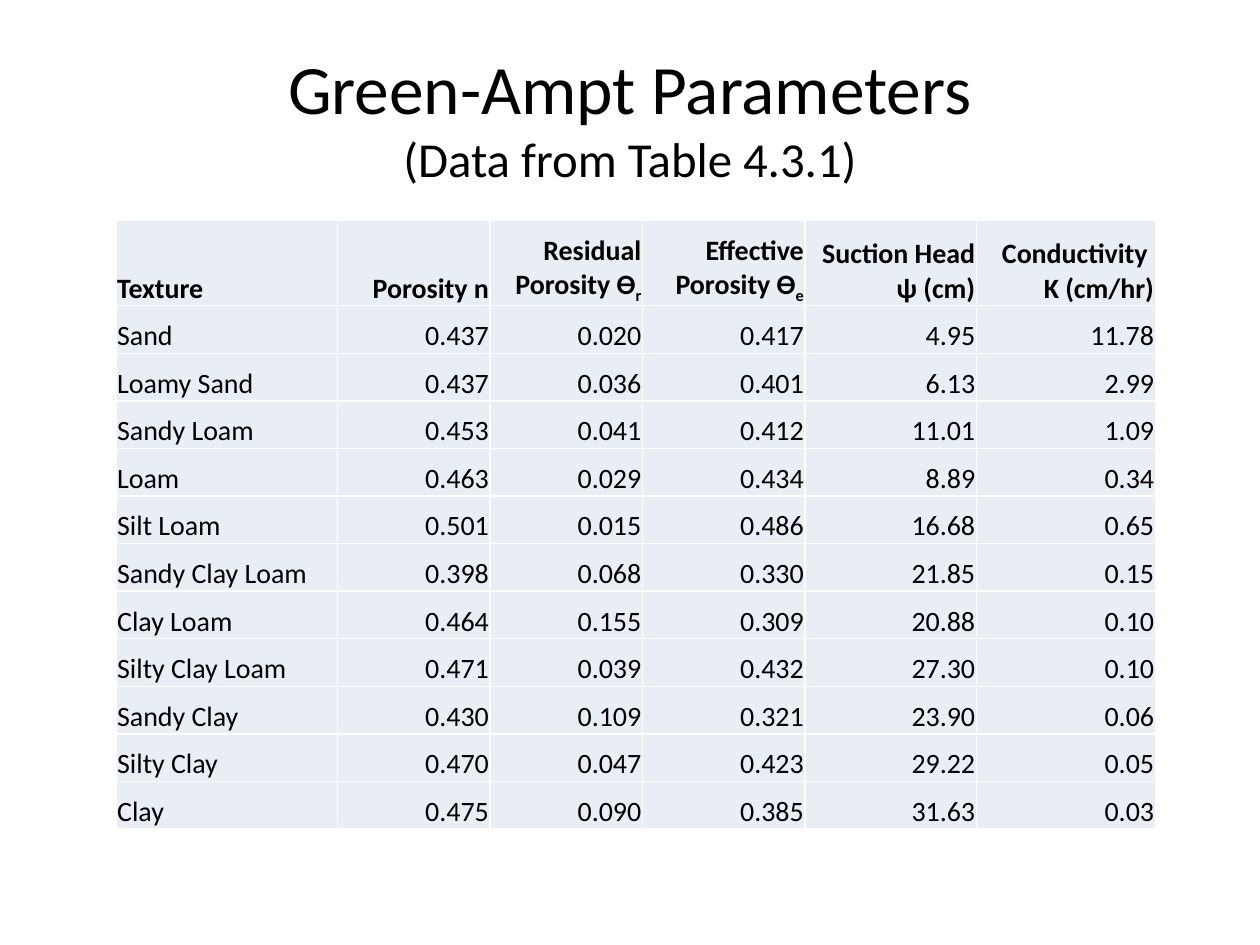
import dataclasses
import lxml.etree
import pptx
import pptx.dml.color
import pptx.enum.text
import pptx.oxml.ns
import pptx.util


@dataclasses.dataclass
class Theme:
    font: str = "Calibri"
    ink: str = "000000"
    fill: str = "E9EDF4"
    rule: str = "FFFFFF"
    head: float = 39.6
    sub: float = 27.9
    body: float = 16
    line: float = 1


class Deck:
    def __init__(self, theme, wide, high):
        self.theme = theme
        self.show = pptx.Presentation()
        self.show.slide_width = pptx.util.Inches(wide)
        self.show.slide_height = pptx.util.Inches(high)
        self.slide = self.show.slides.add_slide(self.show.slide_layouts[5])

    def box(self, left, top, wide, high):
        full = (self.show.slide_width, self.show.slide_height) * 2
        return [round(part * size) for part, size in zip((left, top, wide, high), full)]

    def style(self, run, size, bold=False):
        run.font.name = self.theme.font
        run.font.size = pptx.util.Pt(size)
        run.font.bold = bold
        run.font.color.rgb = pptx.dml.color.RGBColor.from_string(self.theme.ink)

    def title(self, text, area):
        shape = self.slide.shapes.title
        shape.left, shape.top, shape.width, shape.height = self.box(*area)
        frame = shape.text_frame
        frame.text = text
        frame.auto_size = pptx.enum.text.MSO_AUTO_SIZE.NONE
        frame.vertical_anchor = pptx.enum.text.MSO_ANCHOR.MIDDLE
        para = frame.paragraphs[0]
        para.alignment = pptx.enum.text.PP_ALIGN.CENTER
        for run, size in zip(para.runs, (self.theme.head, self.theme.sub)):
            self.style(run, size)

    def border(self, cell):
        props = cell._tc.get_or_add_tcPr()
        for side in ("lnL", "lnR", "lnT", "lnB"):
            line = lxml.etree.SubElement(props, pptx.oxml.ns.qn(f"a:{side}"))
            line.set("w", str(pptx.util.Pt(self.theme.line)))
            solid = lxml.etree.SubElement(line, pptx.oxml.ns.qn("a:solidFill"))
            tone = lxml.etree.SubElement(solid, pptx.oxml.ns.qn("a:srgbClr"))
            tone.set("val", self.theme.rule)

    def cell(self, cell, text, align, bold, below=""):
        self.border(cell)
        cell.fill.solid()
        cell.fill.fore_color.rgb = pptx.dml.color.RGBColor.from_string(self.theme.fill)
        cell.vertical_anchor = pptx.enum.text.MSO_ANCHOR.BOTTOM
        cell.margin_left = cell.margin_right = cell.margin_top = pptx.util.Inches(0.01)
        cell.margin_bottom = 0
        cell.text_frame.text = text
        if below:
            mark = cell.text_frame.paragraphs[-1].add_run()
            mark.text = below
            mark.font._element.set("baseline", "-25000")
        for para in cell.text_frame.paragraphs:
            para.alignment = align
            for run in para.runs:
                self.style(run, self.theme.body, bold)

    def table(self, rows, area, cols, top, marks):
        left, above, wide, high = self.box(*area)
        frame = self.slide.shapes.add_table(len(rows), len(cols), left, above, wide, high)
        grid = frame.table
        grid.first_row = grid.horz_banding = False
        for col, share in zip(grid.columns, cols):
            col.width = round(wide * share / sum(cols))
        first = round(high * top)
        for r, row in enumerate(rows):
            grid.rows[r].height = first if r == 0 else (high - first) // (len(rows) - 1)
            for c, text in enumerate(row):
                align = pptx.enum.text.PP_ALIGN.RIGHT if c else pptx.enum.text.PP_ALIGN.LEFT
                below = marks.get(c, "") if r == 0 else ""
                self.cell(grid.cell(r, c), text, align, r == 0, below)


HEADS = ("Texture", "Porosity n", "Residual Porosity ϴ", "Effective Porosity ϴ",
         "Suction Head ψ (cm)", "Conductivity \nK (cm/hr)")
SOILS = (
    ("Sand", "0.437", "0.020", "0.417", "4.95", "11.78"),
    ("Loamy Sand", "0.437", "0.036", "0.401", "6.13", "2.99"),
    ("Sandy Loam", "0.453", "0.041", "0.412", "11.01", "1.09"),
    ("Loam", "0.463", "0.029", "0.434", "8.89", "0.34"),
    ("Silt Loam", "0.501", "0.015", "0.486", "16.68", "0.65"),
    ("Sandy Clay Loam", "0.398", "0.068", "0.330", "21.85", "0.15"),
    ("Clay Loam", "0.464", "0.155", "0.309", "20.88", "0.10"),
    ("Silty Clay Loam", "0.471", "0.039", "0.432", "27.30", "0.10"),
    ("Sandy Clay", "0.430", "0.109", "0.321", "23.90", "0.06"),
    ("Silty Clay", "0.470", "0.047", "0.423", "29.22", "0.05"),
    ("Clay", "0.475", "0.090", "0.385", "31.63", "0.03"),
)


def main():
    deck = Deck(Theme(), 10, 7.5)
    deck.title("Green-Ampt Parameters\v(Data from Table 4.3.1)",
               (0.05, 0.3 / 7.5, 0.9, 1.25 / 7.5))
    deck.table((HEADS, *SOILS), (0.92 / 10, 1.75 / 7.5, 8.25 / 10, 4.83 / 7.5),
               (1.76, 1.21, 1.21, 1.29, 1.36, 1.42), 0.14, {2: "r", 3: "e"})
    deck.show.save("out.pptx")


if __name__ == "__main__":
    main()
